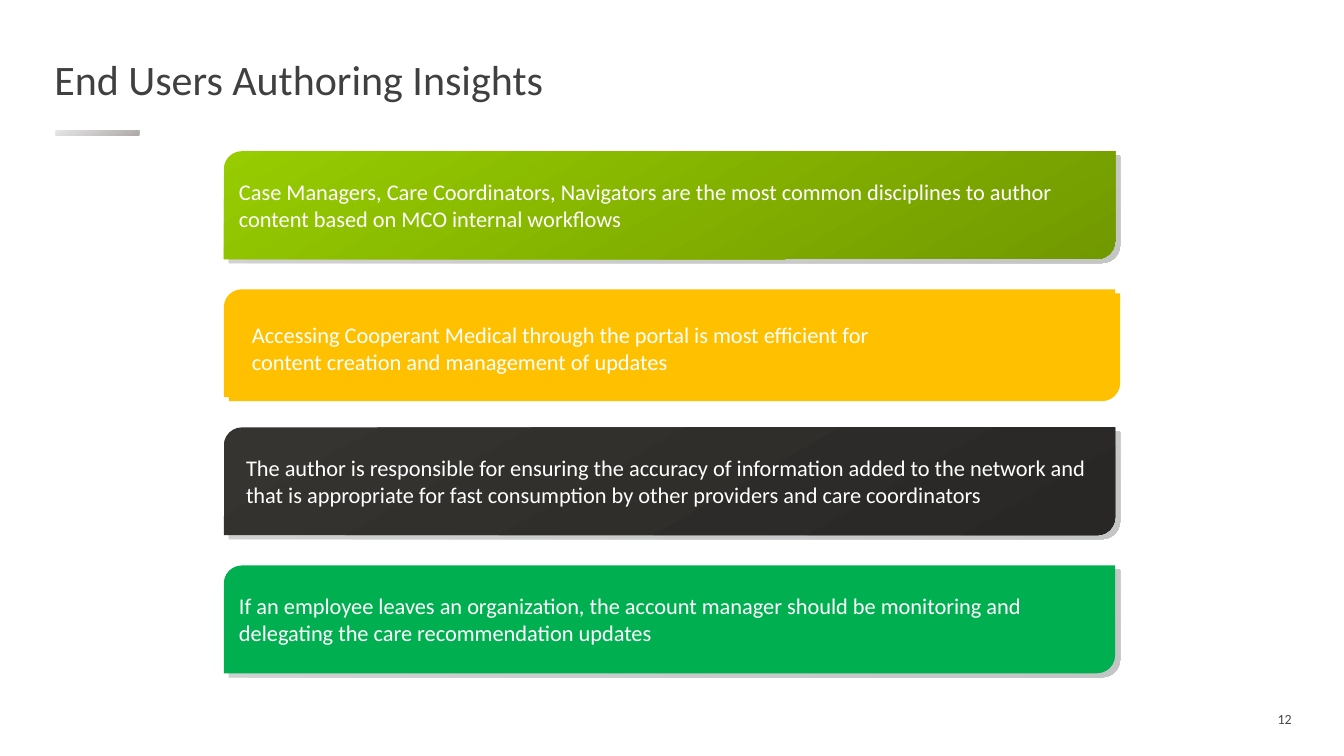
from lxml.etree import SubElement
from pptx import Presentation
from pptx.dml.color import RGBColor
from pptx.enum.shapes import MSO_SHAPE as SHAPE
from pptx.enum.text import MSO_ANCHOR as ANCHOR, PP_ALIGN as ALIGN
from pptx.oxml.ns import qn
from pptx.util import Pt

COLORS = {
    "white": "FFFFFF", "title": "404041", "number": "474747",
    "rule_light": "E7E6E6", "rule_dark": "AFABAB",
    "shadow_light": "818285", "shadow_dark": "58595B",
    "lime": "97CC00", "olive": "719900", "amber": "FFC000",
    "charcoal": "353431", "black": "282725", "green": "00B050",
}
EMU_PER_PX = 9144  # 100 px to the inch


def px(n):
    return n * EMU_PER_PX


class SlideBuilder:
    font = "Calibri"

    def __init__(self, prs):
        self.slide = prs.slides.add_slide(prs.slide_layouts[6])

    def fill(self, sp, colors, alpha=None):
        """Fill with one colour, or with a 60 degree gradient between two."""
        if len(colors) == 1:
            sp.fill.solid()
            sp.fill.fore_color.rgb = RGBColor.from_string(COLORS[colors[0]])
            return
        sp.fill.gradient()
        sp.fill.gradient_angle = 300
        for stop, name in zip(sp.fill.gradient_stops, colors):
            stop.color.rgb = RGBColor.from_string(COLORS[name])
        if alpha is not None:
            for clr in sp._element.spPr.iter(qn("a:srgbClr")):
                SubElement(clr, qn("a:alpha"), val=str(alpha * 1000))

    def shape(self, kind, box, colors, alpha=None, parent=None):
        shapes = (parent or self.slide).shapes
        sp = shapes.add_shape(kind, *map(px, box))
        sp.shadow.inherit = False
        sp.line.fill.background()
        self.fill(sp, colors, alpha)
        return sp

    def set_text(self, sp, text, size=16, color="white", align=ALIGN.LEFT,
                 anchor=ANCHOR.MIDDLE):
        tf = sp.text_frame
        tf.word_wrap = True
        tf.vertical_anchor = anchor
        tf.text = text
        p = tf.paragraphs[0]
        p.alignment = align
        font = p.runs[0].font
        font.name, font.size = self.font, Pt(size)
        font.color.rgb = RGBColor.from_string(COLORS[color])
        return p

    def text(self, box, text, **style):
        tb = self.slide.shapes.add_textbox(*map(px, box))
        return tb, self.set_text(tb, text, **style)

    def card(self, top, colors, shadow, alpha, text, indent):
        """Draw a rounded bar over its offset shadow, as one group."""
        left, width, height = 222, 884, 107
        group = self.slide.shapes.add_group_shape()
        self.shape(SHAPE.ROUND_2_DIAG_RECTANGLE,
                   (left + 5, top + 4, width, height), shadow, alpha, group)
        sp = self.shape(SHAPE.ROUND_2_DIAG_RECTANGLE,
                        (left, top, width, height), colors, parent=group)
        if text:
            p = self.set_text(sp, text)
            if indent:
                p.space_after = Pt(3)
                p._p.get_or_add_pPr().set("marL", str(px(indent)))


def main():
    prs = Presentation()
    prs.slide_width, prs.slide_height = px(1333), px(750)
    s = SlideBuilder(prs)

    s.shape(SHAPE.RECTANGLE, (55, 129, 83, 5), ["rule_light", "rule_dark"])
    title, p = s.text((44, 52, 1246, 58), "End Users Authoring Insights",
                      size=30, color="title")
    title.text_frame.margin_top = title.text_frame.margin_bottom = 0
    p.line_spacing, p.space_before = 0.9, Pt(10)
    s.text((942, 705, 349, 16), "12", size=10, color="number",
           align=ALIGN.RIGHT)

    gray = ["shadow_light", "shadow_dark"]
    cards = [
        (["lime", "olive"], gray,
         "Case Managers, Care Coordinators, Navigators are the most common "
         "disciplines to author content based on MCO internal workflows", 0),
        (["amber"], ["amber"], "", 0),
        (["charcoal", "black"], gray,
         "The author is responsible for ensuring the accuracy of information "
         "added to the network and that is appropriate for fast consumption "
         "by other providers and care coordinators", 7),
        (["green"], gray,
         "If an employee leaves an organization, the account manager should "
         "be monitoring and delegating the care recommendation updates", 0),
    ]
    for i, (colors, shadow, text, indent) in enumerate(cards):
        s.card(150 + 137 * i, colors, shadow, 35, text, indent)

    s.text((240, 314, 667, 64),
           "Accessing Cooperant Medical through the portal is most efficient "
           "for content creation and management of updates",
           anchor=ANCHOR.TOP)

    prs.save("out.pptx")


if __name__ == "__main__":
    main()
